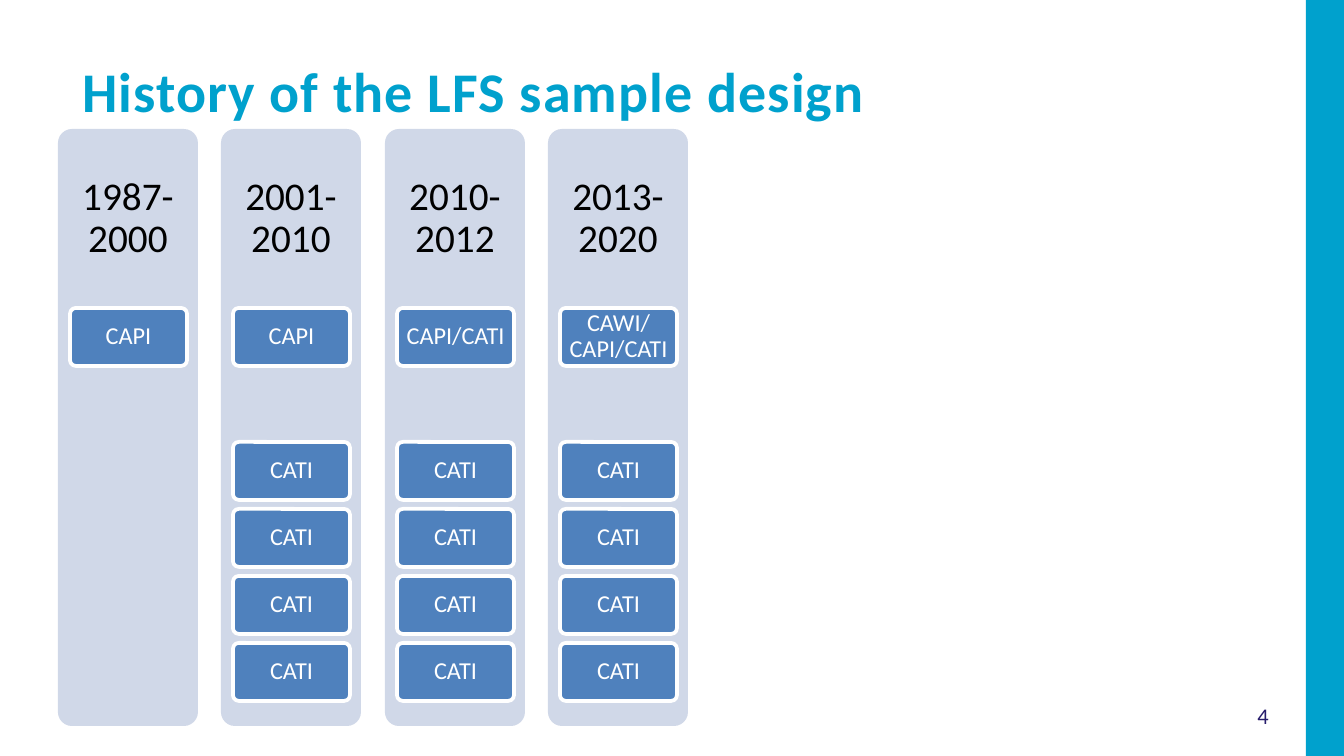
from dataclasses import dataclass

from pptx import Presentation, util as u
from pptx.dml.color import RGBColor
from pptx.enum import shapes, text


@dataclass(frozen=True)
class Theme:
    font: str = "Calibri"
    accent: str = "00A1CD"
    number: str = "271D6C"
    panel: str = "D0D8E8"
    mode: str = "4F81BD"
    black: str = "000000"
    white: str = "FFFFFF"
    title_size: int = 30
    period_size: int = 21
    mode_size: int = 13
    number_size: int = 12


THEME = Theme()
PX_PER_INCH = 134.4

PANEL_LEFT, PANEL_TOP, PANEL_WIDTH, PANEL_HEIGHT = 58, 129, 140, 597
PANELS_SPAN = 490  # from the first panel's left edge to the last one's
MODE_INDENT, MODE_WIDTH, MODE_HEIGHT = 12, 117, 58
FIRST_WAVE_TOP, FOLLOW_UP_TOP, FOLLOW_UP_PITCH = 308, 442, 67

PERIODS = [
    ("1987- 2000", "CAPI", 0),
    ("2001-2010", "CAPI", 4),
    ("2010-2012", "CAPI/CATI", 4),
    ("2013-2020", "CAWI/CAPI/CATI", 4),
]


def px(length):
    return u.Emu(round(length * 914400 / PX_PER_INCH))


def color(value):
    return RGBColor.from_string(value)


def write(shape, words, size, ink, align=text.PP_ALIGN.CENTER, bold=False):
    shape.text_frame.word_wrap = True
    para = shape.text_frame.paragraphs[0]
    para.alignment = align
    para.font.name = THEME.font
    para.font.size = u.Pt(size)
    para.font.bold = bold
    para.font.color.rgb = color(ink)
    span = para.add_run()
    span.text = words
    return span


def add_block(page, kind, left, top, width, height, fill, line=None):
    shape = page.shapes.add_shape(kind, px(left), px(top), px(width), px(height))
    shape.shadow.inherit = False
    shape.fill.solid()
    shape.fill.fore_color.rgb = color(fill)
    if line:
        shape.line.color.rgb = color(line)
        shape.line.width = u.Pt(2)
    else:
        shape.line.fill.background()
    return shape


def add_label(page, left, top, width, height, fill, words, size, ink, inset, bottom, line=None):
    """Add a rounded block with centred words; insets are in px."""
    shape = add_block(page, shapes.MSO_SHAPE.ROUNDED_RECTANGLE,
                      left, top, width, height, fill, line)
    shape.adjustments[0] = 0.1
    frame = shape.text_frame
    frame.margin_left = frame.margin_top = frame.margin_right = px(inset)
    frame.margin_bottom = px(bottom)
    frame.vertical_anchor = text.MSO_ANCHOR.MIDDLE
    write(shape, words, size, ink)
    frame.paragraphs[0].line_spacing = 0.9


def add_mode(page, left, top, words):
    add_label(page, left, top, MODE_WIDTH, MODE_HEIGHT, THEME.mode, words,
              THEME.mode_size, THEME.white, 1, 1, THEME.white)


def add_period(page, left, period, first_mode, follow_ups):
    add_label(page, left, PANEL_TOP, PANEL_WIDTH, PANEL_HEIGHT, THEME.panel, period,
              THEME.period_size, THEME.black, 17, 435)
    mode_left = left + MODE_INDENT
    add_mode(page, mode_left, FIRST_WAVE_TOP, first_mode)
    for wave in range(follow_ups):
        add_mode(page, mode_left, FOLLOW_UP_TOP + wave * FOLLOW_UP_PITCH, "CATI")


def add_title(page, words):
    box = page.shapes.add_textbox(px(69), px(50), px(1122), px(74))
    span = write(box, words, THEME.title_size, THEME.accent, text.PP_ALIGN.LEFT, bold=True)
    span.font._element.set("spc", "60")


def add_page_number(page, number):
    box = page.shapes.add_textbox(px(1220), px(692), px(86), px(47))
    box.text_frame.vertical_anchor = text.MSO_ANCHOR.MIDDLE
    write(box, number, THEME.number_size, THEME.number)


def main():
    deck = Presentation()
    deck.slide_width, deck.slide_height = px(1344), px(756)
    page = deck.slides.add_slide(deck.slide_layouts[6])
    add_block(page, shapes.MSO_SHAPE.RECTANGLE, 1306, 0, 38, 756, THEME.accent)
    add_page_number(page, "4")
    add_title(page, "History of the LFS sample design")
    for index, (period, first_mode, follow_ups) in enumerate(PERIODS):
        left = PANEL_LEFT + round(index * PANELS_SPAN / (len(PERIODS) - 1))
        add_period(page, left, period, first_mode, follow_ups)
    deck.save("out.pptx")


if __name__ == "__main__":
    main()
